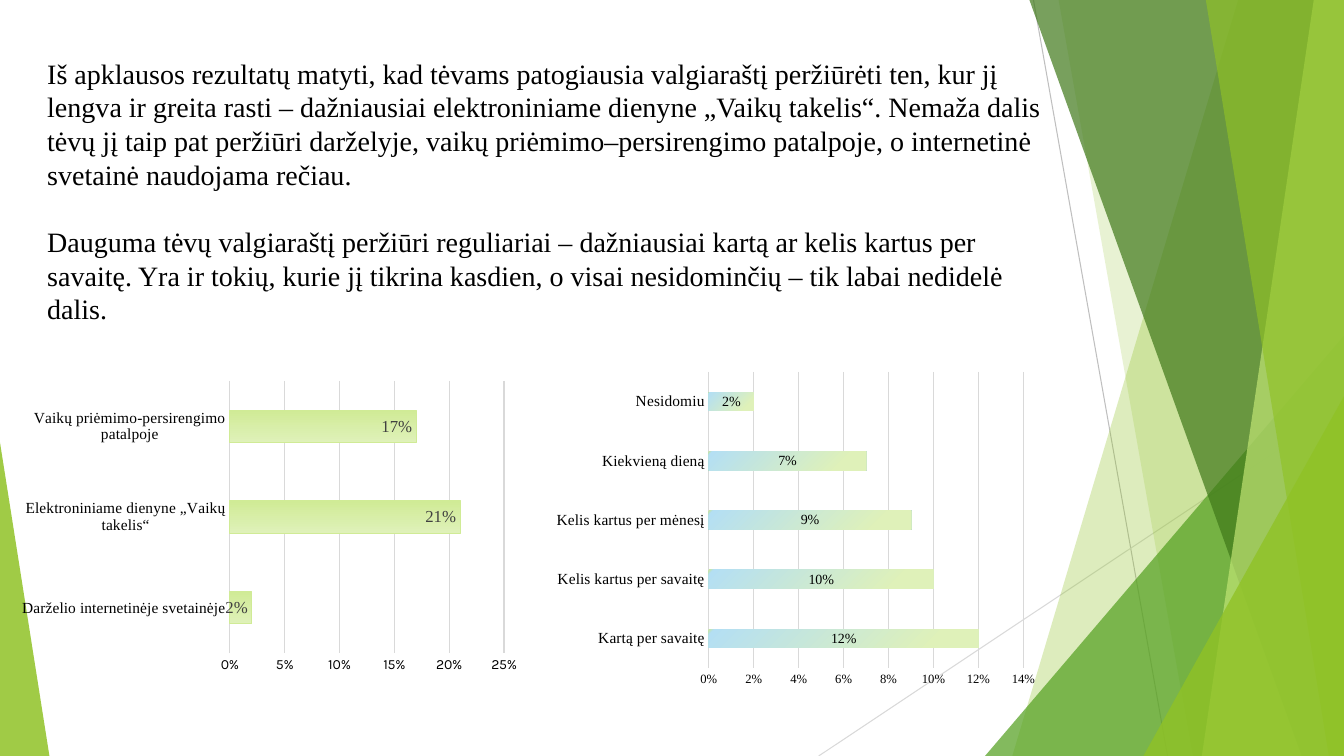
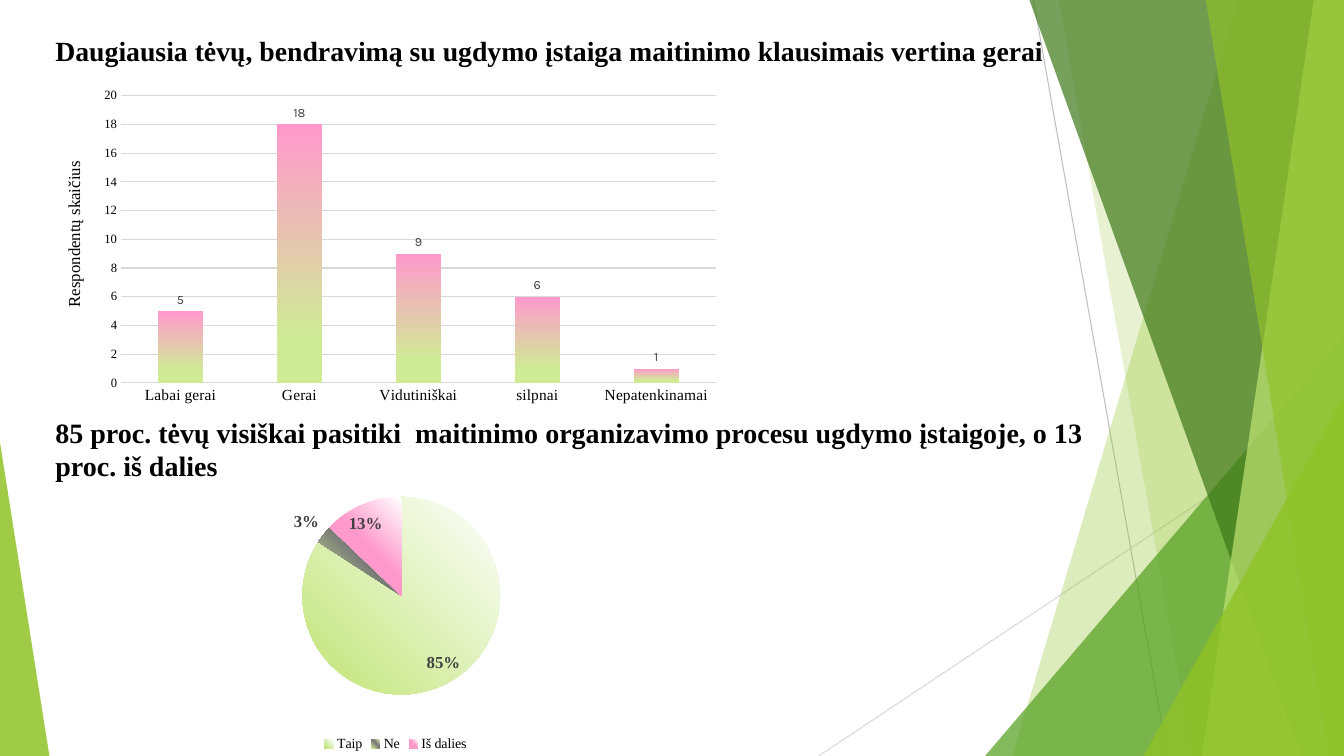
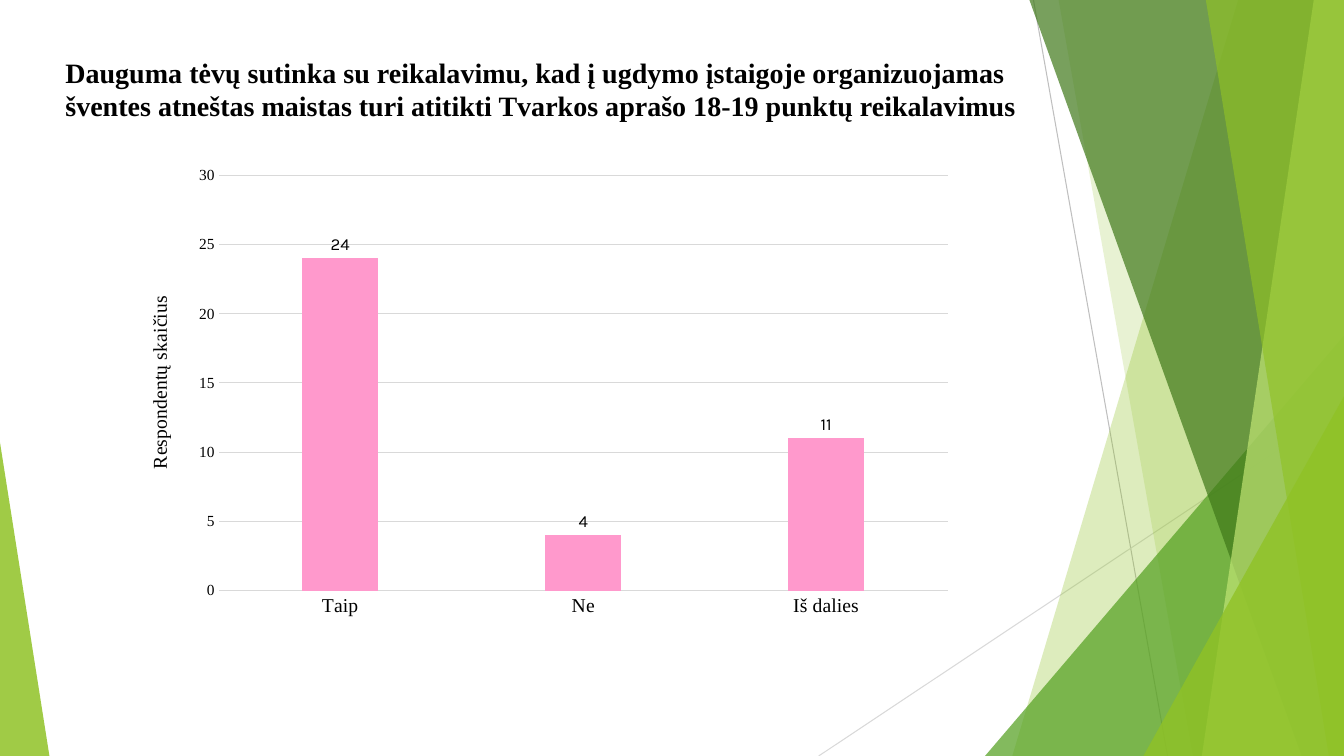
import pptx
import pptx.chart.data
import pptx.dml.color
import pptx.enum.chart
import pptx.enum.shapes
import pptx.oxml.ns
import pptx.util
from lxml import etree

Inches = pptx.util.Inches
Pt = pptx.util.Pt
RGBColor = pptx.dml.color.RGBColor
qn = pptx.oxml.ns.qn
ChartType = pptx.enum.chart.XL_CHART_TYPE
LabelPosition = pptx.enum.chart.XL_LABEL_POSITION

# Shared look
BLACK = RGBColor(0x00, 0x00, 0x00)
WHITE = RGBColor(0xFF, 0xFF, 0xFF)
DARK_GREY = RGBColor(0x40, 0x40, 0x40)
MID_GREY = RGBColor(0x76, 0x76, 0x76)
LINE_GREY = RGBColor(0xBF, 0xBF, 0xBF)
GRID_GREY = RGBColor(0xD9, 0xD9, 0xD9)
GREEN = RGBColor(0x90, 0xC2, 0x26)
LEAF_GREEN = RGBColor(0x54, 0xA0, 0x21)
DARK_GREEN = RGBColor(0x3F, 0x78, 0x19)
LIME = RGBColor(0xC0, 0xE4, 0x74)
SOFT_LIME = RGBColor(0xD0, 0xEB, 0x96)
PALE_LIME = RGBColor(0xDF, 0xF1, 0xB9)
SKY = RGBColor(0xB4, 0xDF, 0xF3)
PINK = RGBColor(0xFF, 0x99, 0xCC)

SERIF = "Times New Roman"
SANS = "Karla"
WIDTH, HEIGHT = 13.33, 7.5
COUNT_TITLE = "Respondentų skaičius"


def style_font(font, size, color=BLACK, name=SERIF, bold=False):
    font.size = Pt(size)
    font.name = name
    font.bold = bold
    font.color.rgb = color


# Backdrop
def paint(shape, color, opacity):
    shape.shadow.inherit = False
    shape.fill.solid()
    shape.fill.fore_color.rgb = color
    tint = shape.element.spPr.find(".//" + qn("a:srgbClr"))
    etree.SubElement(tint, qn("a:alpha"), val=str(opacity * 1000))
    shape.line.fill.background()


def add_thin_line(slide, start, end, color):
    line = slide.shapes.add_connector(
        pptx.enum.shapes.MSO_CONNECTOR.STRAIGHT,
        *[Inches(value) for value in start + end])
    line.line.color.rgb = color
    line.line.width = Pt(0.75)
    etree.SubElement(line.element.spPr, qn("a:effectLst"))


def add_edge_band(slide, top_x, bottom_x, color, opacity):
    """A band from a slanted left side to the right edge of the slide."""
    corners = [(top_x, 0), (WIDTH, 0), (WIDTH, HEIGHT), (bottom_x, HEIGHT)]
    points = [(Inches(x), Inches(y)) for x, y in corners]
    builder = slide.shapes.build_freeform(*points[0])
    builder.add_line_segments(points[1:], close=True)
    paint(builder.convert_to_shape(), color, opacity)


def add_corner(slide, left, top, width, apex, color, opacity):
    """A triangle standing on the bottom edge of the slide."""
    shape = slide.shapes.add_shape(
        pptx.enum.shapes.MSO_SHAPE.ISOSCELES_TRIANGLE,
        Inches(left), Inches(top), Inches(width), Inches(HEIGHT - top))
    shape.adjustments[0] = apex
    paint(shape, color, opacity)


def build_backdrop(slide):
    """Draw the shared facets, then move them to the slide's layout."""
    add_thin_line(slide, (10.25, 0), (11.58, HEIGHT), LINE_GREY)
    add_thin_line(slide, (WIDTH, 4.03), (8.12, HEIGHT), GRID_GREY)
    add_edge_band(slide, 12.28, 10.04, GREEN, 30)
    add_edge_band(slide, 10.5, 11.83, GREEN, 20)
    add_corner(slide, 9.77, 3.33, 3.56, 1, LEAF_GREEN, 72)
    add_edge_band(slide, 10.21, 12.91, DARK_GREEN, 70)
    add_edge_band(slide, 13.03, 11.92, LIME, 70)
    add_edge_band(slide, 11.96, 13.18, GREEN, 65)
    add_corner(slide, 11.34, 3.93, 1.99, 1, GREEN, 80)
    add_corner(slide, 0, 4.39, 0.49, 0, GREEN, 85)
    layout = slide.slide_layout
    for placeholder in list(layout.placeholders):
        layout.shapes.element.remove(placeholder.element)
    for shape in list(slide.shapes):
        layout.shapes.element.append(shape.element)


# Text
def add_text(slide, box, paragraphs, size=20, bold=True):
    shape = slide.shapes.add_textbox(*[Inches(value) for value in box])
    frame = shape.text_frame
    frame.word_wrap = True
    frame.text = "\n".join(paragraphs)
    for index, paragraph in enumerate(frame.paragraphs):
        if index:
            paragraph.space_before = Pt(24)
        for run in paragraph.runs:
            style_font(run.font, size, bold=bold)


# Charts
def set_layout(parent, index, box, area):
    """Place a chart part; area is on the slide and may lack a size."""
    for old in parent.findall(qn("c:layout")):
        parent.remove(old)
    layout = etree.Element(qn("c:layout"))
    manual = etree.SubElement(layout, qn("c:manualLayout"))
    if len(area) == 4:
        etree.SubElement(manual, qn("c:layoutTarget"), val="inner")
    for tag in ("xMode", "yMode"):
        etree.SubElement(manual, qn("c:" + tag), val="edge")
    left, top, width, height = box
    shares = [(area[0] - left) / width, (area[1] - top) / height]
    if len(area) == 4:
        shares += [area[2] / width, area[3] / height]
    for tag, share in zip("xywh", shares):
        etree.SubElement(manual, qn("c:" + tag), val=f"{share:.4f}")
    parent.insert(index, layout)


def fill_gradient(chart, fill, stops, angle):
    fill.gradient()
    gradient = chart.element.findall(".//" + qn("a:gradFill"))[-1]
    stop_list = gradient.find(qn("a:gsLst"))
    for old in list(stop_list):
        stop_list.remove(old)
    for position, color in stops:
        stop = etree.SubElement(stop_list, qn("a:gs"), pos=str(position * 1000))
        etree.SubElement(stop, qn("a:srgbClr"), val=str(color))
    gradient.find(qn("a:lin")).set("ang", str(angle * 60000))


def add_chart(slide, kind, box, plot_area, points, number_format="General"):
    data = pptx.chart.data.CategoryChartData(number_format=number_format)
    data.categories = [name for name, value in points]
    data.add_series("Series 1", [value for name, value in points])
    chart = slide.shapes.add_chart(
        kind, *[Inches(value) for value in box], data).chart
    chart.has_title = False
    chart.has_legend = False
    style_font(chart.font, 10, name=SANS)
    set_layout(chart.element.find(".//" + qn("c:plotArea")), 0, box, plot_area)
    return chart


def add_labels(series, position, size, number_format, **style):
    labels = series.data_labels
    labels.show_value = True
    labels.position = position
    labels.number_format = number_format
    labels.number_format_is_linked = False
    style_font(labels.font, size, **style)


def style_axes(chart, category_size, value_size, top, step, number_format,
               value_font=SERIF):
    category_axis, value_axis = chart.category_axis, chart.value_axis
    for axis in (category_axis, value_axis):
        axis.major_tick_mark = pptx.enum.chart.XL_TICK_MARK.NONE
        axis.minor_tick_mark = pptx.enum.chart.XL_TICK_MARK.NONE
    style_font(category_axis.tick_labels.font, category_size)
    style_font(value_axis.tick_labels.font, value_size, name=value_font)
    value_axis.minimum_scale = 0
    value_axis.maximum_scale = top
    value_axis.major_unit = step
    value_axis.tick_labels.number_format = number_format
    value_axis.tick_labels.number_format_is_linked = False
    value_axis.format.line.fill.background()
    value_axis.has_major_gridlines = True
    for line in (category_axis.format.line, value_axis.major_gridlines.format.line):
        line.color.rgb = GRID_GREY
        line.width = Pt(0.75)


def add_bar_chart(slide, kind, box, plot_area, points, axes, gap,
                  number_format="0", overlap=0):
    chart = add_chart(slide, kind, box, plot_area, points, number_format)
    plot = chart.plots[0]
    plot.vary_by_categories = False
    plot.gap_width = gap
    plot.overlap = overlap
    style_axes(chart, *axes[:4], number_format, *axes[4:])
    return chart, plot.series[0]


def add_value_title(chart, box, corner, size):
    frame = chart.value_axis.axis_title.text_frame
    frame.text = COUNT_TITLE
    style_font(frame.paragraphs[0].runs[0].font, size)
    title = chart.element.find(".//" + qn("c:valAx") + "/" + qn("c:title"))
    body = title.find(".//" + qn("a:bodyPr"))
    body.set("rot", "-5400000")
    body.set("vert", "horz")
    set_layout(title, 1, box, corner)


# Slides
def build_menu_slide(slide):
    add_text(slide, (0.37, 0.51, 10.22, 2.91), [
        "Iš apklausos rezultatų matyti, kad tėvams patogiausia valgiaraštį "
        "peržiūrėti ten, kur jį lengva ir greita rasti – dažniausiai "
        "elektroniniame dienyne „Vaikų takelis“. Nemaža dalis tėvų jį taip pat "
        "peržiūri darželyje, vaikų priėmimo–persirengimo patalpoje, o "
        "internetinė svetainė naudojama rečiau.",
        "Dauguma tėvų valgiaraštį peržiūri reguliariai – dažniausiai kartą ar "
        "kelis kartus per savaitę. Yra ir tokių, kurie jį tikrina kasdien, o "
        "visai nesidominčių – tik labai nedidelė dalis.",
    ], bold=False)

    places = [("Darželio internetinėje svetainėje", 0.02),
              ("Elektroniniame dienyne „Vaikų takelis“", 0.21),
              ("Vaikų priėmimo-persirengimo patalpoje", 0.17)]
    chart, series = add_bar_chart(
        slide, ChartType.BAR_CLUSTERED, (0.18, 3.63, 5.05, 3.24),
        (2.28, 3.78, 2.72, 2.7), places, (11, 10, 0.25, 0.05, SANS), 182, "0%")
    fill_gradient(chart, series.format.fill,
                  [(0, SOFT_LIME), (100, PALE_LIME)], 90)
    series.format.line.color.rgb = SOFT_LIME
    series.format.line.width = Pt(0.75)
    add_labels(series, LabelPosition.INSIDE_END, 12, "0%", color=DARK_GREY)

    frequency = [("Kartą per savaitę", 0.12), ("Kelis kartus per savaitę", 0.10),
                 ("Kelis kartus per mėnesį", 0.09), ("Kiekvieną dieną", 0.07),
                 ("Nesidomiu", 0.02)]
    chart, series = add_bar_chart(
        slide, ChartType.BAR_CLUSTERED, (5.42, 3.63, 4.95, 3.24),
        (7.03, 3.69, 3.12, 2.94), frequency, (11, 9, 0.14, 0.02), 219, "0%")
    fill_gradient(chart, series.format.fill,
                  [(0, SOFT_LIME), (2, SKY), (83, PALE_LIME)], 45)
    add_labels(series, LabelPosition.CENTER, 10, "0%")


def build_trust_slide(slide):
    add_text(slide, (0.45, 0.29, 10.25, 0.53), [
        "Daugiausia tėvų, bendravimą su ugdymo įstaiga maitinimo klausimais "
        "vertina gerai"], size=19.8)

    box = (0.45, 0.82, 6.79, 3.26)
    ratings = [("Labai gerai", 5), ("Gerai", 18), ("Vidutiniškai", 9),
               ("silpnai", 6), ("Nepatenkinamai", 1)]
    chart, series = add_bar_chart(
        slide, ChartType.COLUMN_CLUSTERED, box, (1.2, 0.95, 5.9, 2.85),
        ratings, (11, 9, 20, 2), 164)
    fill_gradient(chart, series.format.fill,
                  [(0, PINK), (83, SOFT_LIME), (100, SOFT_LIME)], 90)
    add_labels(series, LabelPosition.OUTSIDE_END, 9, "0",
               color=DARK_GREY, name=SANS)
    add_value_title(chart, box, (0.6, 1.57), 12)

    answers = [("Taip", 85), ("Ne", 3), ("Iš dalies", 13)]
    slices = [[(0, WHITE), (100, LIME)],
              [(0, PALE_LIME), (45, MID_GREY), (100, SOFT_LIME)],
              [(0, WHITE), (48, PINK), (100, PINK)]]
    chart = add_chart(slide, ChartType.PIE, (1.19, 4.61, 5.47, 2.89),
                      (3, 4.93, 1.96, 1.96), answers)
    series = chart.plots[0].series[0]
    for index, stops in enumerate(slices):
        fill_gradient(chart, series.points[index].format.fill, stops, 135)
    add_labels(series, LabelPosition.BEST_FIT, 12, '0"%"',
               color=DARK_GREY, bold=True)
    chart.has_legend = True
    chart.legend.position = pptx.enum.chart.XL_LEGEND_POSITION.BOTTOM
    chart.legend.include_in_layout = False
    style_font(chart.legend.font, 10)

    add_text(slide, (0.45, 4.07, 10.51, 0.77), [
        "85 proc. tėvų visiškai pasitiki  maitinimo organizavimo procesu "
        "ugdymo įstaigoje, o 13 proc. iš dalies"])


def build_food_slide(slide):
    add_text(slide, (0.55, 0.5, 9.79, 1.58), [
        "Dauguma tėvų sutinka su reikalavimu, kad į ugdymo įstaigoje "
        "organizuojamas šventes atneštas maistas turi atitikti Tvarkos aprašo "
        "18-19 punktų reikalavimus"])

    box = (1.3, 1.56, 8.27, 4.64)
    answers = [("Taip", 24), ("Ne", 4), ("Iš dalies", 11)]
    chart, series = add_bar_chart(
        slide, ChartType.COLUMN_CLUSTERED, box, (2.17, 1.74, 7.23, 4.12),
        answers, (14, 11, 30, 5), 219, overlap=-27)
    series.format.fill.solid()
    series.format.fill.fore_color.rgb = PINK
    add_labels(series, LabelPosition.OUTSIDE_END, 12, "0", name=SANS)
    add_value_title(chart, box, (1.42, 2.9), 14)


def main():
    presentation = pptx.Presentation()
    presentation.slide_width = Inches(WIDTH)
    presentation.slide_height = Inches(HEIGHT)
    blank = presentation.slide_layouts[6]
    builders = (build_menu_slide, build_trust_slide, build_food_slide)
    slides = [presentation.slides.add_slide(blank) for _ in builders]
    build_backdrop(slides[0])
    for build, slide in zip(builders, slides):
        build(slide)
    presentation.save("out.pptx")


if __name__ == "__main__":
    main()
